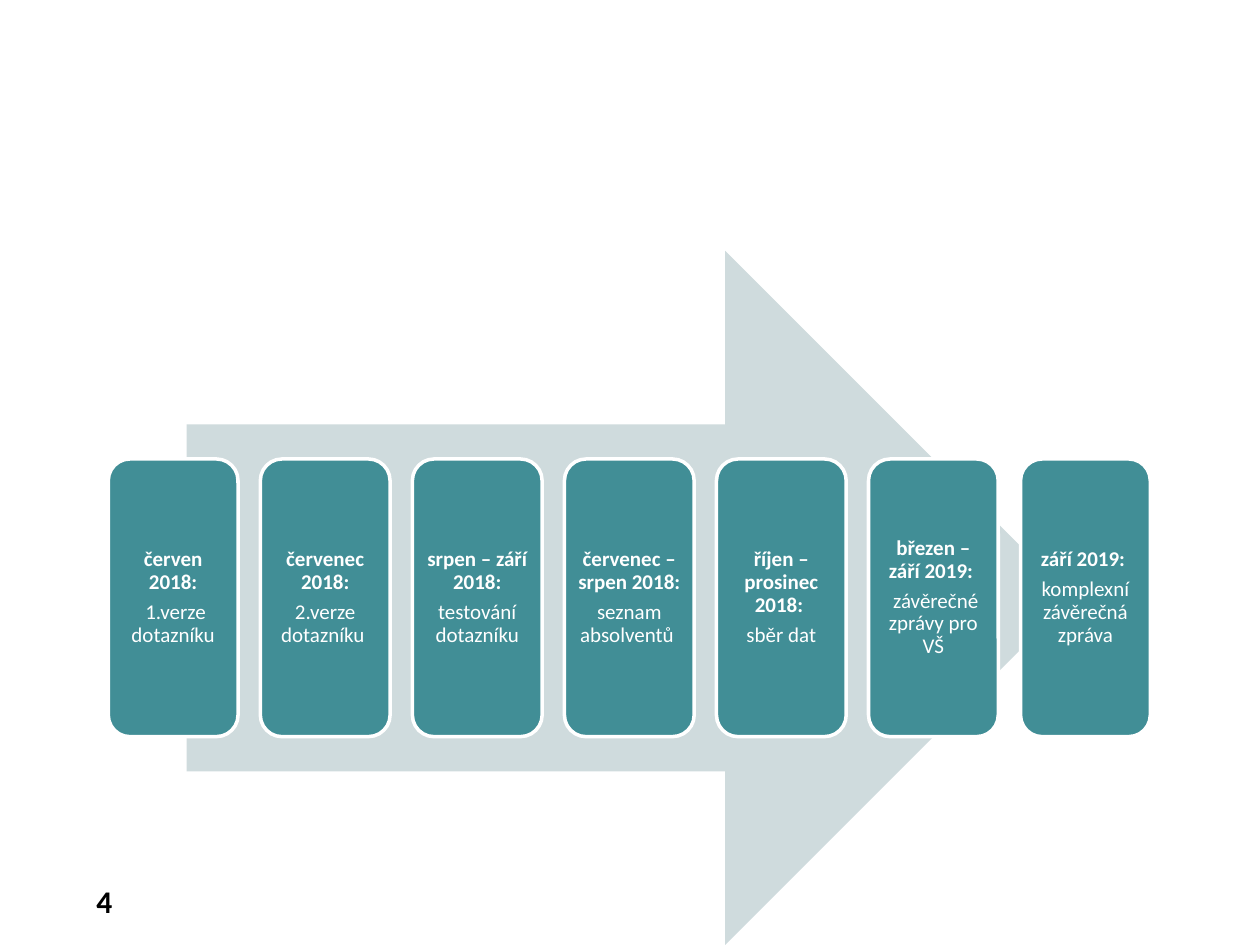
from pptx import Presentation, util as u
from pptx.dml.color import RGBColor
from pptx.enum import shapes, text

COLORS = {"arrow": "CFDBDD", "step": "418E96", "white": "FFFFFF", "number": "000000"}
FONT = "Calibri"

STEPS = [
    ("červen 2018:", " 1.verze dotazníku"),
    ("červenec 2018:", "2.verze dotazníku "),
    ("srpen – září 2018:", "testování dotazníku"),
    ("červenec – srpen 2018: ", "seznam absolventů "),
    ("říjen – prosinec 2018: ", "sběr dat"),
    ("březen – září 2019: ", " závěrečné zprávy pro VŠ"),
    ("září 2019: ", "komplexní závěrečná zpráva"),
]


def rgb(name):
    return RGBColor.from_string(COLORS[name])


def style(paragraph, size, color, bold, align):
    paragraph.alignment = align
    for run in paragraph.runs:
        run.font.name = FONT
        run.font.size = u.Pt(size)
        run.font.bold = bold
        run.font.color.rgb = rgb(color)


def add_filled(slide, kind, left, top, width, height, color):
    shape = slide.shapes.add_shape(
        kind, u.Inches(left), u.Inches(top), u.Inches(width), u.Inches(height))
    shape.shadow.inherit = False
    shape.fill.solid()
    shape.fill.fore_color.rgb = rgb(color)
    shape.line.fill.background()
    return shape


def add_step(slide, left, top, width, height, date, task):
    card = add_filled(slide, shapes.MSO_SHAPE.ROUNDED_RECTANGLE,
                      left, top, width, height, "step")
    card.line.color.rgb = rgb("white")
    card.line.width = u.Pt(2)

    frame = card.text_frame
    frame.word_wrap = True
    frame.vertical_anchor = text.MSO_ANCHOR.MIDDLE
    frame.margin_left = frame.margin_right = u.Inches(0.05)
    frame.margin_top = frame.margin_bottom = u.Inches(0.05)
    frame.text = f"{date}\n{task}"
    for paragraph, bold in zip(frame.paragraphs, (True, False)):
        style(paragraph, 12, "white", bold, text.PP_ALIGN.CENTER)
        paragraph.line_spacing = 0.9
    frame.paragraphs[0].space_after = u.Pt(4.2)


def add_timeline(slide, left, top, width, height):
    # Background arrow, 85 % of the width and centred
    arrow_width = 0.85 * width
    add_filled(slide, shapes.MSO_SHAPE.RIGHT_ARROW, left + (width - arrow_width) / 2,
               top, arrow_width, height, "arrow")

    # Step cards, evenly spread and 40 % of the height
    card_width, card_height = 1.03, 0.4 * height
    pitch = (width - card_width) / (len(STEPS) - 1)
    for i, (date, task) in enumerate(STEPS):
        add_step(slide, left + i * pitch, top + (height - card_height) / 2,
                 card_width, card_height, date, task)


def add_page_number(slide, left, top, width, height, number):
    box = slide.shapes.add_textbox(
        u.Inches(left), u.Inches(top), u.Inches(width), u.Inches(height))
    frame = box.text_frame
    frame.word_wrap = True
    frame.vertical_anchor = text.MSO_ANCHOR.MIDDLE
    frame.text = number
    style(frame.paragraphs[0], 18, "number", True, text.PP_ALIGN.RIGHT)


def main():
    deck = Presentation()
    deck.slide_width, deck.slide_height = u.Inches(10), u.Inches(7.5)
    slide = deck.slides.add_slide(deck.slide_layouts[6])
    add_page_number(slide, 0.28, 6.95, 0.71, 0.4, "4")
    add_timeline(slide, 0.86, 1.99, 8.27, 5.51)
    deck.save("out.pptx")


if __name__ == "__main__":
    main()
